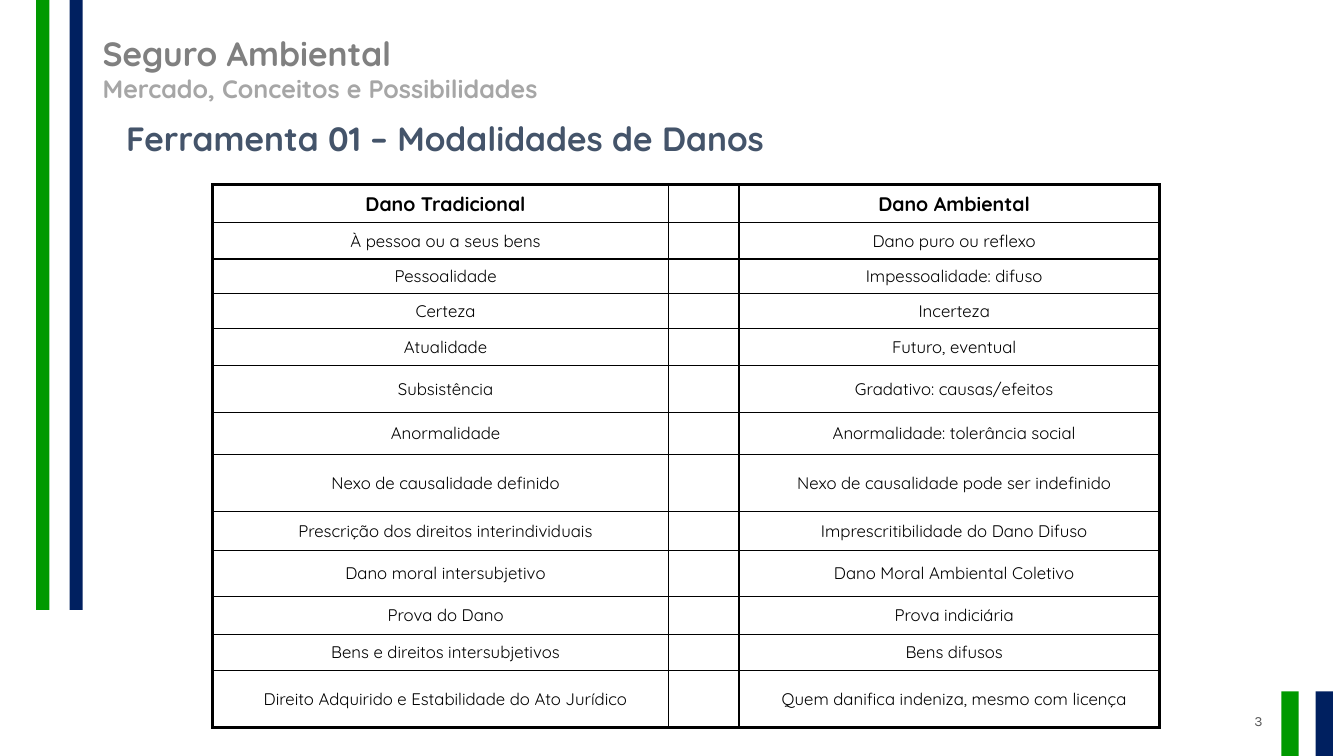
"""Build a slide that compares traditional and environmental damage in a table."""
from dataclasses import dataclass

from lxml import etree
from pptx import Presentation
from pptx.dml.color import RGBColor
from pptx.enum.shapes import MSO_SHAPE
from pptx.enum.text import MSO_ANCHOR, PP_ALIGN
from pptx.oxml.ns import qn
from pptx.util import Pt

RECTANGLE = MSO_SHAPE.RECTANGLE
TOP, MIDDLE = MSO_ANCHOR.TOP, MSO_ANCHOR.MIDDLE
LEFT, CENTER, RIGHT = PP_ALIGN.LEFT, PP_ALIGN.CENTER, PP_ALIGN.RIGHT
EMU_PER_PX = 9144


@dataclass(frozen=True)
class Theme:
    """Colours, fonts, type sizes and line widths."""
    green: str = "009900"
    navy: str = "002060"
    slate: str = "44546A"
    gray: str = "808080"
    pale: str = "A6A6A6"
    dark: str = "595959"
    black: str = "000000"
    main_font: str = "Quicksand"
    number_font: str = "Karla"
    heading: int = 24
    subheading: int = 18
    table_head: int = 14
    table_body: int = 12
    page_number: int = 10
    thin: float = 1
    thick: float = 2.25


THEME = Theme()

TITLE = "Ferramenta 01 – Modalidades de Danos"
COURSE = [
    ("Seguro Ambiental", THEME.heading, THEME.gray),
    ("Mercado, Conceitos e Possibilidades", THEME.subheading, THEME.pale),
]
PAGE = "3"
DAMAGES = [
    ("Dano Tradicional", "Dano Ambiental", 38),
    ("À pessoa ou a seus bens", "Dano puro ou reflexo", 36),
    ("Pessoalidade", "Impessoalidade: difuso", 34),
    ("Certeza", "Incerteza", 35),
    ("Atualidade", "Futuro, eventual", 37),
    ("Subsistência", "Gradativo: causas/efeitos", 46),
    ("Anormalidade", "Anormalidade: tolerância social", 42),
    ("Nexo de causalidade definido", "Nexo de causalidade pode ser indefinido", 57),
    ("Prescrição dos direitos interindividuais", "Imprescritibilidade do Dano Difuso", 38),
    ("Dano moral intersubjetivo", "Dano Moral Ambiental Coletivo", 46),
    ("Prova do Dano", "Prova indiciária", 38),
    ("Bens e direitos intersubjetivos", "Bens difusos", 35),
    ("Direito Adquirido e Estabilidade do Ato Jurídico",
     "Quem danifica indeniza, mesmo com licença", 57),
]
COLUMN_WIDTHS = (452, 70, 417)
BAR_PAIRS = [((36, 69), 0, 13, 605), ((1271, 1305), 686, 17, 64)]


def px(length):
    return length * EMU_PER_PX


def box(*lengths):
    return [px(length) for length in lengths]


def add_run(paragraph, text, size, color, bold=True, font=THEME.main_font):
    run = paragraph.add_run()
    run.text = text
    run.font.size = Pt(size)
    run.font.name = font
    run.font.bold = bold
    run.font.color.rgb = RGBColor.from_string(color)


def add_bars(slide):
    for lefts, top, width, height in BAR_PAIRS:
        for left, color in zip(lefts, (THEME.green, THEME.navy)):
            bar = slide.shapes.add_shape(RECTANGLE, *box(left, top, width, height))
            bar.shadow.inherit = False
            bar.fill.solid()
            bar.fill.fore_color.rgb = RGBColor.from_string(color)
            bar.line.fill.background()


def fill_title(slide):
    title = slide.shapes.title
    title.left, title.top, title.width, title.height = box(115, 112, 1055, 50)
    title.text_frame.vertical_anchor = TOP
    paragraph = title.text_frame.paragraphs[0]
    paragraph.alignment = LEFT
    paragraph.line_spacing = 1.0
    add_run(paragraph, TITLE, THEME.heading, THEME.slate)


def add_course(slide):
    frame = slide.shapes.add_textbox(*box(92, 28, 979, 81)).text_frame
    frame.word_wrap = True
    for index, (text, size, color) in enumerate(COURSE):
        paragraph = frame.add_paragraph() if index else frame.paragraphs[0]
        add_run(paragraph, text, size, color)


def add_page_number(slide):
    frame = slide.shapes.add_textbox(*box(962, 695, 300, 40)).text_frame
    frame.word_wrap = True
    frame.vertical_anchor = MIDDLE
    paragraph = frame.paragraphs[0]
    paragraph.alignment = RIGHT
    add_run(paragraph, PAGE, THEME.page_number, THEME.dark, False, THEME.number_font)


def set_borders(cell, outer_edges):
    properties = cell._tc.get_or_add_tcPr()
    for side, is_outer in outer_edges.items():
        width = THEME.thick if is_outer else THEME.thin
        border = etree.SubElement(properties, qn(f"a:ln{side}"), w=str(Pt(width)))
        fill = etree.SubElement(border, qn("a:solidFill"))
        etree.SubElement(fill, qn("a:srgbClr"), val=THEME.black)


def fill_cell(cell, text, is_head):
    size = THEME.table_head if is_head else THEME.table_body
    cell.vertical_anchor = MIDDLE
    paragraph = cell.text_frame.paragraphs[0]
    paragraph.alignment = CENTER
    paragraph._p.get_or_add_pPr().set("marL", str(px(10)))
    if text:
        add_run(paragraph, text, size, THEME.black, is_head)
    else:
        etree.SubElement(paragraph._p, qn("a:endParaRPr"), sz=str(size * 100))


def add_damage_table(slide):
    heights = [height for *_, height in DAMAGES]
    last_row, last_column = len(DAMAGES) - 1, len(COLUMN_WIDTHS) - 1
    table = slide.shapes.add_table(
        len(DAMAGES), len(COLUMN_WIDTHS),
        *box(211, 183, sum(COLUMN_WIDTHS), sum(heights))).table
    table.first_row = table.horz_banding = False
    for column, width in zip(table.columns, COLUMN_WIDTHS):
        column.width = px(width)
    for r, (traditional, environmental, height) in enumerate(DAMAGES):
        table.rows[r].height = px(height)
        for c, text in enumerate((traditional, "", environmental)):
            cell = table.cell(r, c)
            fill_cell(cell, text, r == 0)
            set_borders(cell, {"L": c == 0, "R": c == last_column,
                               "T": r == 0, "B": r == last_row})
            cell.fill.background()


def main():
    presentation = Presentation()
    presentation.slide_width, presentation.slide_height = box(1333, 750)
    slide = presentation.slides.add_slide(presentation.slide_layouts[5])
    add_bars(slide)
    add_page_number(slide)
    add_damage_table(slide)
    add_course(slide)
    fill_title(slide)
    presentation.save("out.pptx")


if __name__ == "__main__":
    main()
